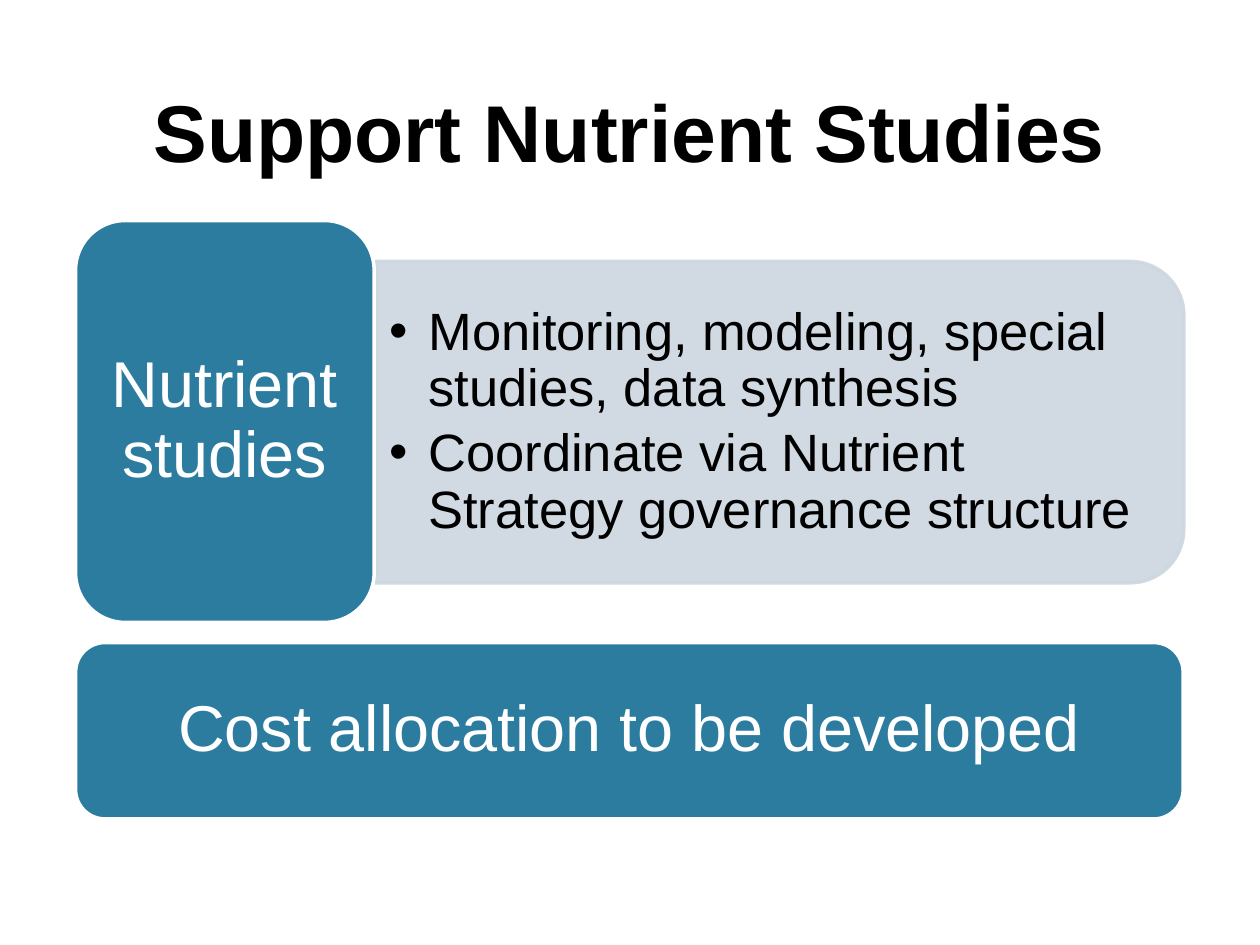
from dataclasses import dataclass

from lxml.etree import SubElement
from pptx import Presentation
from pptx.dml.color import RGBColor
from pptx.enum.shapes import MSO_SHAPE as Preset
from pptx.enum.text import MSO_ANCHOR as Anchor, PP_ALIGN as Align
from pptx.oxml.ns import qn
from pptx.shapes.autoshape import Shape
from pptx.slide import Slide
from pptx.text.text import TextFrame
from pptx.util import Inches, Pt

BLACK = RGBColor(0, 0, 0)
WHITE = RGBColor(0xFF, 0xFF, 0xFF)
TEAL = RGBColor(0x2C, 0x7C, 0x9F)
PALE_BLUE = RGBColor(0xCD, 0xD7, 0xDF)
FONT = "Arial"


@dataclass(frozen=True)
class Box:
    left: float
    top: float
    width: float
    height: float

    def lengths(self) -> tuple[int, ...]:
        return tuple(Inches(n) for n in (self.left, self.top, self.width, self.height))


@dataclass(frozen=True)
class Card:
    text: str
    box: Box


@dataclass(frozen=True)
class TextStyle:
    size: float
    color: RGBColor
    align: Align = Align.CENTER
    bold: bool = False
    line_spacing: float = 0.9
    space_after: float = 0
    bulleted: bool = False


TITLE_STYLE = TextStyle(46, BLACK, bold=True, line_spacing=1.0)
CARD_STYLE = TextStyle(37, WHITE)
BULLET_STYLE = TextStyle(30, BLACK, Align.LEFT, space_after=4.5, bulleted=True)

TITLE_BOX = Box(0.26, 0.01, 9.47, 1.46)
PANEL_BOX = Box(4.91, 0.14, 2.55, 6.42)
BULLET_BOX = Box(2.97, 2.2, 6.3, 2.3)
BULLETS = [
    "Monitoring, modeling, special studies, data synthesis",
    "Coordinate via Nutrient Strategy governance structure",
]
CARDS = [
    Card("Nutrient studies", Box(0.6, 1.75, 2.37, 3.19)),
    Card("Cost allocation to be developed", Box(0.6, 5.1, 8.79, 1.4)),
]


def write_text(
    frame: TextFrame,
    lines: list[str],
    style: TextStyle,
    anchor: Anchor,
    side_inset: float,
    end_inset: float,
) -> None:
    frame.word_wrap = True
    frame.vertical_anchor = anchor
    frame.margin_left = frame.margin_right = Inches(side_inset)
    frame.margin_top = frame.margin_bottom = Inches(end_inset)
    for index, line in enumerate(lines):
        paragraph = frame.add_paragraph() if index else frame.paragraphs[0]
        paragraph.alignment = style.align
        paragraph.line_spacing = style.line_spacing
        paragraph.space_after = Pt(style.space_after)
        if style.bulleted:
            properties = paragraph._p.get_or_add_pPr()
            properties.set("marL", str(Inches(0.31)))
            properties.set("indent", str(Inches(-0.31)))
            SubElement(properties, qn("a:buFont")).set("typeface", FONT)
            SubElement(properties, qn("a:buChar")).set("char", "•")
        run = paragraph.add_run()
        run.text = line
        run.font.name = FONT
        run.font.size = Pt(style.size)
        run.font.bold = style.bold
        run.font.color.rgb = style.color


def add_filled_shape(
    slide: Slide, preset: Preset, box: Box, fill: RGBColor, line: RGBColor
) -> Shape:
    shape = slide.shapes.add_shape(preset, *box.lengths())
    shape.shadow.inherit = False
    shape.fill.solid()
    shape.fill.fore_color.rgb = fill
    shape.line.color.rgb = line
    shape.line.width = Pt(2)
    return shape


def add_panel(slide: Slide) -> None:
    panel = add_filled_shape(
        slide, Preset.ROUND_2_SAME_RECTANGLE, PANEL_BOX, PALE_BLUE, PALE_BLUE
    )
    panel.rotation = 90
    for color in panel._element.spPr.iter(qn("a:srgbClr")):
        SubElement(color, qn("a:alpha")).set("val", "90000")


def add_card(slide: Slide, card: Card) -> None:
    shape = add_filled_shape(slide, Preset.ROUNDED_RECTANGLE, card.box, TEAL, WHITE)
    write_text(shape.text_frame, [card.text], CARD_STYLE, Anchor.MIDDLE, 0.15, 0.08)


def main() -> None:
    presentation = Presentation()
    presentation.slide_width = Inches(10)
    presentation.slide_height = Inches(7.5)
    slide = presentation.slides.add_slide(presentation.slide_layouts[6])

    title = slide.shapes.add_textbox(*TITLE_BOX.lengths())
    write_text(
        title.text_frame, ["Support Nutrient Studies"], TITLE_STYLE, Anchor.BOTTOM, 0.1, 0.05
    )
    add_panel(slide)
    bullets = slide.shapes.add_textbox(*BULLET_BOX.lengths())
    write_text(bullets.text_frame, BULLETS, BULLET_STYLE, Anchor.MIDDLE, 0.12, 0.06)
    for card in CARDS:
        add_card(slide, card)

    presentation.save("out.pptx")


if __name__ == "__main__":
    main()
